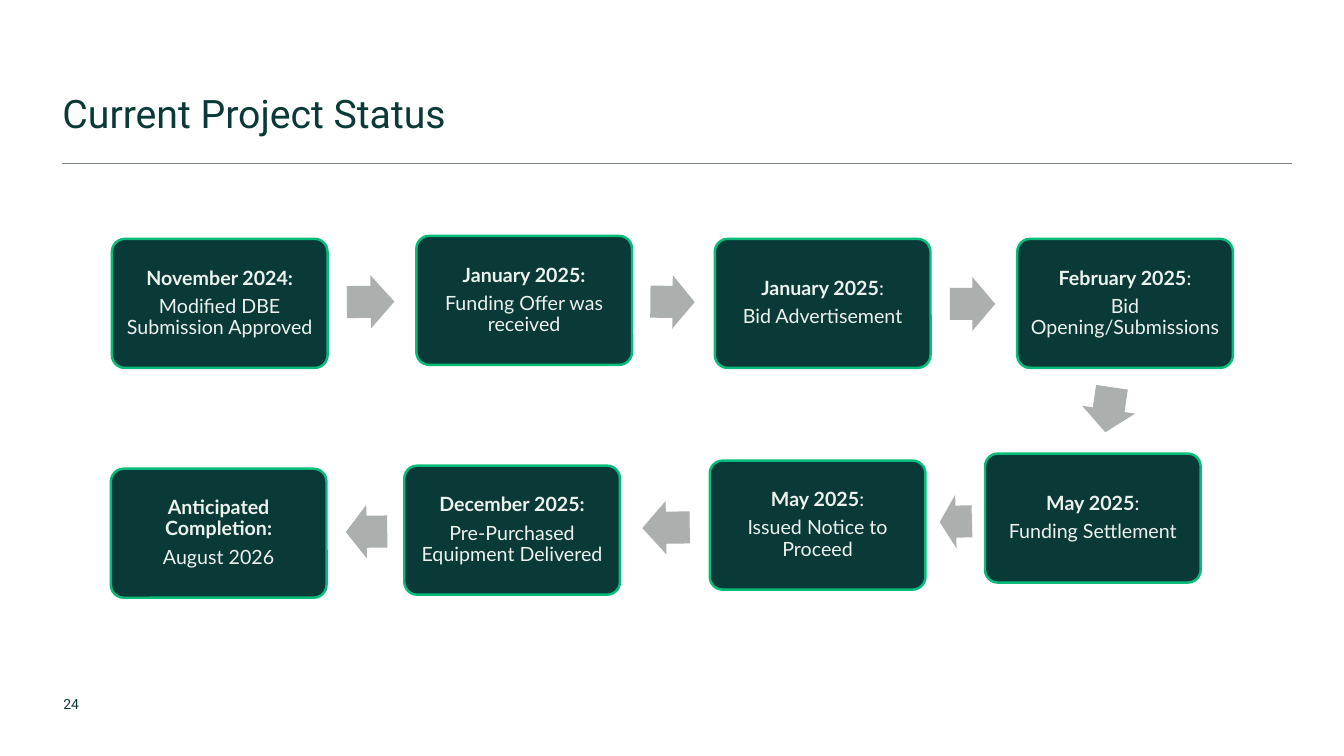
from lxml.etree import SubElement
from pptx import Presentation
from pptx.dml.color import RGBColor
from pptx.enum.shapes import MSO_CONNECTOR, MSO_SHAPE
from pptx.enum.text import MSO_ANCHOR, PP_ALIGN
from pptx.oxml.ns import qn
from pptx.util import Inches, Pt

PINE = RGBColor(0x0A, 0x3A, 0x37)
GREEN = RGBColor(0x07, 0xBB, 0x78)
MIST = RGBColor(0xEE, 0xF2, 0xEE)
ARROW_GREY = RGBColor(0xAB, 0xAF, 0xAE)
RULE_GREY = RGBColor(0x80, 0x88, 0x86)

deck = Presentation()
deck.slide_width, deck.slide_height = Inches(13.33), Inches(7.5)
slide = deck.slides.add_slide(deck.slide_layouts[6])
shapes = slide.shapes


def area(left, top, width, height):
    across, down = deck.slide_width / 100, deck.slide_height / 100
    return [round(v) for v in (left * across, top * down, width * across, height * down)]


def write(paragraph, text, **font):
    run = paragraph.add_run()
    run.text = text
    color = font.pop("color")
    for key, value in font.items():
        setattr(run.font, key, value)
    run.font.color.rgb = color


heading = shapes.add_textbox(*area(4.65, 7.07, 91.45, 11.6)).text_frame
for key, value in {"word_wrap": True, "margin_left": 0, "vertical_anchor": MSO_ANCHOR.BOTTOM}.items():
    setattr(heading, key, value)
heading.paragraphs[0].line_spacing = Pt(30)
write(heading.paragraphs[0], "Current Project Status", name="Roboto", size=Pt(28), color=PINE)

page_number = shapes.add_textbox(*area(3.98, 91.33, 3.9, 3.6)).text_frame
page_number.word_wrap = True
write(page_number.paragraphs[0], "24", name="Roboto", size=Pt(10), color=PINE)

left, top, width, _ = area(4.65, 21.6, 91.45, 0)
rule = shapes.add_connector(MSO_CONNECTOR.STRAIGHT, left, top, left + width, top)
rule.line.color.rgb = RULE_GREY
rule.line.width = Pt(0.75)
SubElement(rule._element.spPr, qn("a:effectLst"))

milestones = [
    (8.33, 31.6, "November 2024:", "", "Modified DBE Submission Approved"),
    (30.98, 31.2, "January 2025:", "", "Funding Offer was received"),
    (53.19, 31.6, "January 2025", ":", "Bid Advertisement"),
    (75.69, 31.6, "February 2025", ":", "Bid Opening/Submissions"),
    (73.29, 60, "May 2025", ":", "Funding Settlement"),
    (52.81, 60.93, "May 2025", ":", "Issued Notice to Proceed"),
    (30.08, 61.6, "December 2025:", "", "Pre-Purchased Equipment Delivered"),
    (8.25, 62, "Anticipated Completion:", "", "August 2026"),
]
card_format = {
    "word_wrap": True,
    "vertical_anchor": MSO_ANCHOR.MIDDLE,
    **{f"margin_{side}": Inches(0.06) for side in ("left", "top", "right", "bottom")},
}
for left, top, date, colon, event in milestones:
    card = shapes.add_shape(MSO_SHAPE.ROUNDED_RECTANGLE, *area(left, top, 16.05, 17.07))
    card.adjustments[0] = 0.1
    card.shadow.inherit = False
    card.fill.solid()
    card.fill.fore_color.rgb = PINE
    card.line.color.rgb = GREEN
    card.line.width = Pt(1.75)
    for key, value in card_format.items():
        setattr(card.text_frame, key, value)
    date_line, event_line = card.text_frame.paragraphs[0], card.text_frame.add_paragraph()
    for paragraph in (date_line, event_line):
        paragraph.alignment = PP_ALIGN.CENTER
        paragraph.line_spacing = 0.9
        paragraph.space_after = Pt(5)
    if event == "August 2026":
        date_line.space_after, event_line.space_after = Pt(6), Pt(12)
    for paragraph, text, bold in ((date_line, date, True), (date_line, colon, False), (event_line, event, False)):
        if text:
            write(paragraph, text, name="Lato", size=Pt(14), bold=bold, color=MIST)

steps = [
    (25.81, 36.4, 3.53, 359.4),
    (48.39, 36.4, 3.3, 0.6),
    (70.67, 36.67, 3.38, 0),
    (80.8, 50.67, 3.38, 98.4),
    (69.92, 65.47, 2.4, 178.5),
    (47.79, 66.27, 3.53, 179.1),
    (25.73, 66.8, 3.08, 179.3),
]
for left, top, width, turn in steps:
    arrow = shapes.add_shape(MSO_SHAPE.RIGHT_ARROW, *area(left, top, width, 7.07))
    arrow.adjustments[0], arrow.adjustments[1] = 0.6, 0.5
    arrow.rotation = turn
    arrow.shadow.inherit = False
    arrow.fill.solid()
    arrow.fill.fore_color.rgb = ARROW_GREY
    arrow.line.fill.background()

deck.save("out.pptx")
